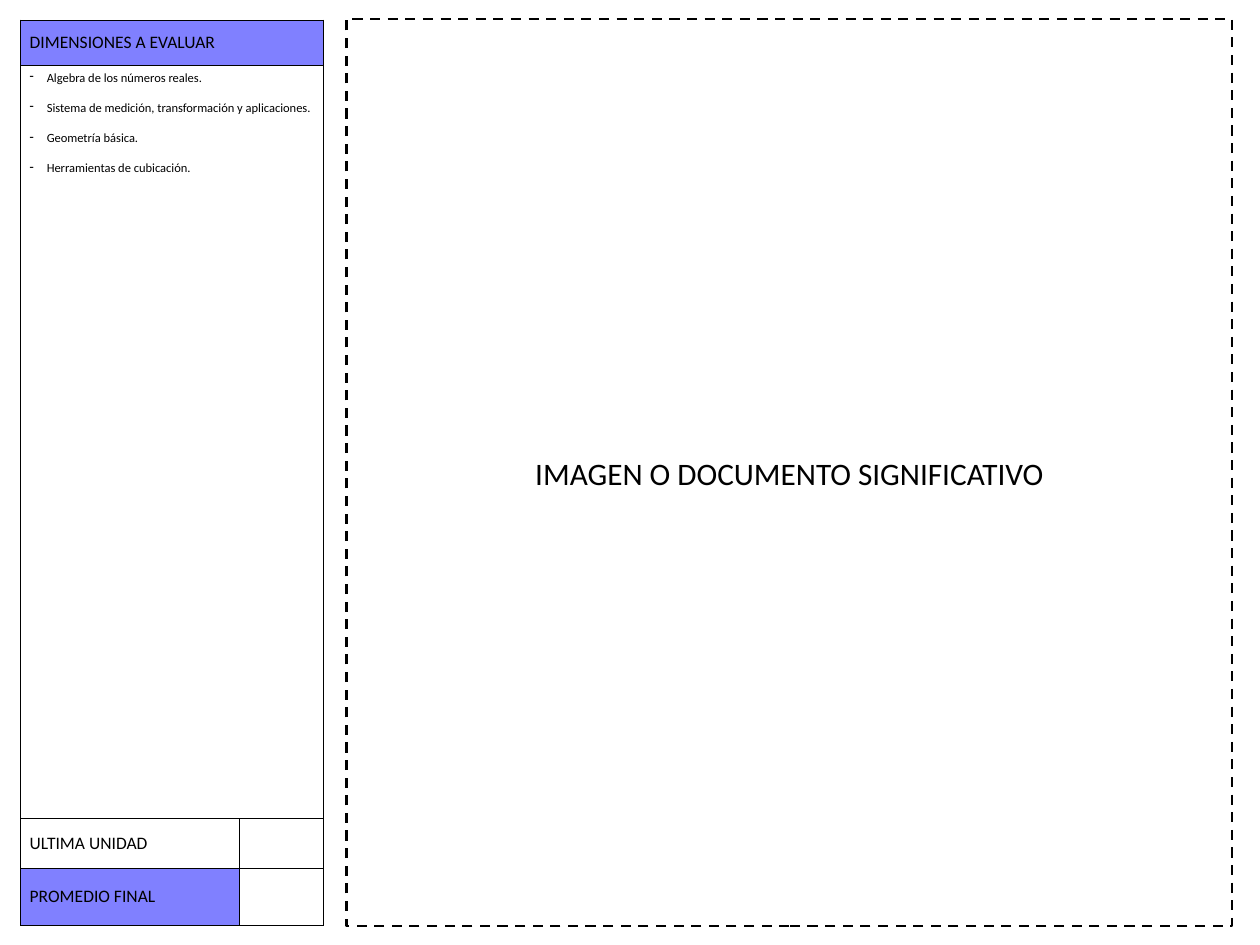
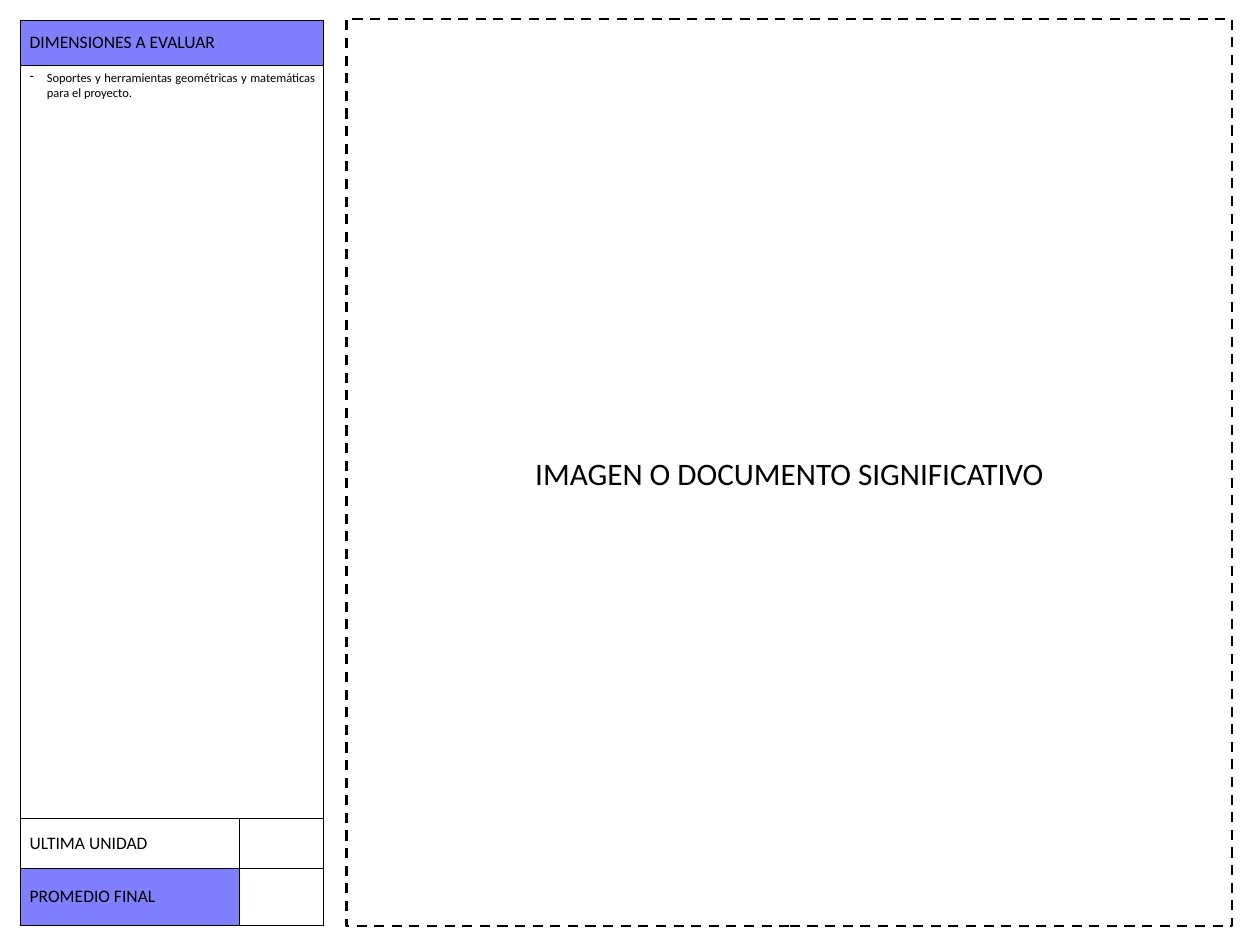
from pptx import Presentation
from pptx.dml.color import RGBColor
from pptx.enum.dml import MSO_LINE
from pptx.enum.shapes import MSO_SHAPE
from pptx.enum.text import MSO_ANCHOR as ANCHOR, PP_ALIGN as ALIGN
from pptx.oxml.ns import qn
from pptx.util import Inches, Pt
from lxml.etree import SubElement

BLACK = RGBColor(0x00, 0x00, 0x00)
WHITE = RGBColor(0xFF, 0xFF, 0xFF)
VIOLET = RGBColor(0x80, 0x80, 0xFF)
FONT = "Calibri"
COLS = (2.43, 0.94)
ROWS = (0.51, 8.37, 0.55, 0.63)
COL_RULES = (1, 0.5, 1)
ROW_RULES = (0.5, 1, 1, 0.5, 1)
INDENT = 0.19

SLIDES = (
    (ALIGN.LEFT, ("Algebra de los números reales.",
                  "Sistema de medición, transformación y aplicaciones.",
                  "Geometría básica.",
                  "Herramientas de cubicación.")),
    (ALIGN.JUSTIFY, ("Soportes y herramientas geométricas y matemáticas "
                     "para el proyecto.",)),
)


def write(p, text, size):
    """Add one black run to a paragraph."""
    r = p.add_run()
    r.text = text
    r.font.name, r.font.size = FONT, Pt(size)
    r.font.color.rgb = BLACK


def add_frame(slide):
    """Draw the dashed frame with its centred caption."""
    sp = slide.shapes.add_shape(MSO_SHAPE.RECTANGLE, Inches(3.85), Inches(0.21),
                                Inches(9.84), Inches(10.08))
    sp.shadow.inherit = False
    sp.fill.background()
    sp.line.color.rgb = BLACK
    sp.line.width = Pt(2)
    sp.line.dash_style = MSO_LINE.DASH
    tf = sp.text_frame
    tf.vertical_anchor = ANCHOR.MIDDLE
    p = tf.paragraphs[0]
    p.alignment = ALIGN.CENTER
    write(p, "IMAGEN O DOCUMENTO SIGNIFICATIVO", 25)


def add_borders(cell, row, col, right):
    """Rule the four sides of a cell by its place in the grid."""
    tc_pr = cell._tc.get_or_add_tcPr()
    widths = {"L": COL_RULES[col], "R": COL_RULES[right],
              "T": ROW_RULES[row], "B": ROW_RULES[row + 1]}
    for side, width in widths.items():
        ln = SubElement(tc_pr, qn(f"a:ln{side}"), w=str(Pt(width)))
        fill = SubElement(ln, qn("a:solidFill"))
        SubElement(fill, qn("a:srgbClr"), val=str(BLACK))


def style_cell(cell, row, col, right, color=WHITE):
    """Set the borders, fill and anchor of a cell."""
    add_borders(cell, row, col, right)
    cell.fill.solid()
    cell.fill.fore_color.rgb = color
    cell.vertical_anchor = ANCHOR.MIDDLE


def add_items(cell, items, align):
    """Fill a cell with a dashed list."""
    cell.vertical_anchor = ANCHOR.TOP
    tf = cell.text_frame
    for i, item in enumerate(items):
        p = tf.add_paragraph() if i else tf.paragraphs[0]
        p.alignment = align
        p.space_before = Pt(12 if i else 0)
        p_pr = p._p.get_or_add_pPr()
        p_pr.set("marL", str(Inches(INDENT)))
        p_pr.set("indent", str(-Inches(INDENT)))
        SubElement(p_pr, qn("a:buChar"), char="-")
        write(p, item, 10)


def add_score_table(slide, items, align):
    """Build the table of dimensions with the two score rows."""
    table = slide.shapes.add_table(
        len(ROWS), len(COLS), Inches(0.23), Inches(0.22),
        Inches(sum(COLS)), Inches(sum(ROWS))).table
    table.first_row = table.horz_banding = False
    for column, width in zip(table.columns, COLS):
        column.width = Inches(width)
    for line, height in zip(table.rows, ROWS):
        line.height = Inches(height)
    labels = (("DIMENSIONES A EVALUAR", VIOLET), (None, WHITE),
              ("ULTIMA UNIDAD", WHITE), ("PROMEDIO FINAL", VIOLET))
    for row, (label, color) in enumerate(labels):
        cell, score = table.cell(row, 0), table.cell(row, 1)
        merged = row < 2
        if merged:
            cell.merge(score)
        else:
            style_cell(score, row, 1, 2)
        style_cell(cell, row, 0, 2 if merged else 1, color)
        if label:
            write(cell.text_frame.paragraphs[0], label, 14)
        else:
            add_items(cell, items, align)


def main():
    """Build both evaluation slides."""
    prs = Presentation()
    prs.slide_width, prs.slide_height = Inches(14), Inches(10.5)
    for align, items in SLIDES:
        slide = prs.slides.add_slide(prs.slide_layouts[6])
        add_frame(slide)
        add_score_table(slide, items, align)
    prs.save("out.pptx")


if __name__ == "__main__":
    main()
